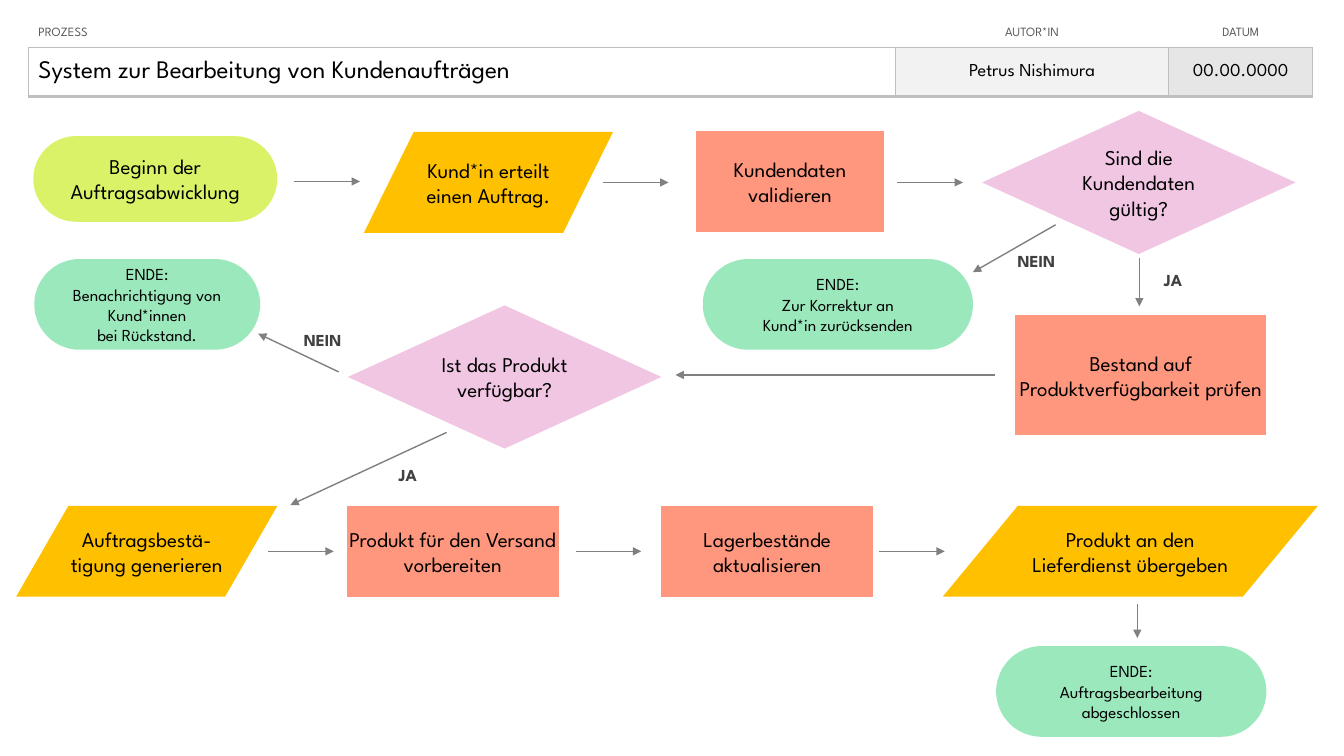
from dataclasses import dataclass
from lxml.etree import SubElement
from pptx import Presentation
from pptx.dml.color import RGBColor as Rgb
from pptx.enum.shapes import MSO_CONNECTOR as Link, MSO_SHAPE as Form
from pptx.enum.text import MSO_ANCHOR as Anchor, PP_ALIGN as Align
from pptx.oxml.ns import qn
from pptx.util import Inches, Pt


@dataclass(frozen=True)
class Theme:
    font: str = "League Spartan"
    ink: str = "000000"
    head: str = "595959"
    label: str = "404040"
    arrow: str = "808080"
    edge: str = "BFBFBF"
    white: str = "FFFFFF"
    light: str = "F2F2F2"
    grey: str = "E6E6E6"
    start: str = "DAF267"
    end: str = "9CE8BD"
    data: str = "FFC000"
    step: str = "FF967E"
    choice: str = "F1C6E3"
    tiny: float = 9
    small: float = 12
    mid: float = 13
    body: float = 15
    title: float = 18


theme = Theme()


def write(frame, text, size=theme.body, color=theme.ink, bold=False, align=Align.CENTER):
    frame.word_wrap = True
    for i, line in enumerate(text.split("\n")):
        para = frame.paragraphs[0] if i == 0 else frame.add_paragraph()
        para.alignment = align
        run = para.add_run()
        run.text = line
        run.font.name = theme.font
        run.font.size = Pt(size)
        run.font.bold = bold
        run.font.color.rgb = Rgb.from_string(color)


def pad(box, left, top, right, bottom):
    box.margin_left, box.margin_right = Inches(left), Inches(right)
    box.margin_top, box.margin_bottom = Inches(top), Inches(bottom)
    box.vertical_anchor = Anchor.MIDDLE


deck = Presentation()
deck.slide_width, deck.slide_height = Inches(13.33), Inches(7.5)
slide = deck.slides.add_slide(deck.slide_layouts[6])
shapes = slide.shapes

table = shapes.add_table(2, 3, Inches(0.28), Inches(0.19), Inches(12.74), Inches(0.77)).table
table.first_row = table.horz_banding = False
for col, width in zip(table.columns, (8.6, 2.71, 1.43)):
    col.width = Inches(width)
for row, height in zip(table.rows, (0.28, 0.49)):
    row.height = Inches(height)

heads = ("PROZESS", "AUTOR*IN", "DATUM")
facts = ("System zur Bearbeitung von Kundenaufträgen", "Petrus Nishimura", "00.00.0000")
fills = (theme.white, theme.light, theme.grey)
sizes = (theme.title, theme.mid, theme.mid)
for c in range(3):
    align = Align.CENTER if c else Align.LEFT
    for r, text in enumerate((heads[c], facts[c])):
        cell = table.cell(r, c)
        pad(cell, 0.01 if c else 0.1, 0.01, 0.01, 0)
        size, color = (sizes[c], theme.ink) if r else (theme.tiny, theme.head)
        write(cell.text_frame, text, size=size, color=color, align=align)
        props = cell._tc.get_or_add_tcPr()
        sides = {"L": 1, "R": 1, "T": 1, "B": 2.25} if r else {"L": 0, "R": 0, "T": 0, "B": 1}
        for side, width in sides.items():
            edge = SubElement(props, qn("a:ln" + side), w=str(Pt(width)))
            if width:
                paint = SubElement(edge, qn("a:solidFill"))
                SubElement(paint, qn("a:srgbClr"), val=theme.edge)
            else:
                SubElement(edge, qn("a:noFill"))
        if r:
            cell.fill.solid()
            cell.fill.fore_color.rgb = Rgb.from_string(fills[c])
        else:
            cell.fill.background()

kinds = {
    "start": (Form.ROUNDED_RECTANGLE, theme.start, theme.body, 0.02),
    "end": (Form.ROUNDED_RECTANGLE, theme.end, theme.small, 0.02),
    "data": (Form.FLOWCHART_DATA, theme.data, theme.body, 0),
    "step": (Form.FLOWCHART_PROCESS, theme.step, theme.body, 0.02),
    "choice": (Form.FLOWCHART_DECISION, theme.choice, theme.body, 0),
}
nodes = (
    ("start", 0.33, 1.35, 2.42, 0.85, "Beginn der Auftragsabwicklung"),
    ("data", 3.61, 1.31, 2.47, 1, "Kund*in erteilt einen Auftrag."),
    ("step", 6.9, 1.3, 1.87, 1, "Kundendaten validieren"),
    ("choice", 9.74, 1.1, 3.11, 1.42, "Sind die Kundendaten gültig?"),
    ("end", 6.97, 2.57, 2.68, 0.9, "ENDE:\nZur Korrektur an\nKund*in zurücksenden"),
    ("step", 10.07, 3.13, 2.49, 1.19, "Bestand auf Produktverfügbarkeit prüfen"),
    ("choice", 3.45, 3.03, 3.11, 1.42, "Ist das Produkt verfügbar?"),
    ("end", 0.34, 2.57, 2.24, 0.9, "ENDE:\nBenachrichtigung von Kund*innen\nbei Rückstand."),
    ("data", 0.16, 5.02, 2.59, 0.9, "Auftragsbestä-tigung generieren"),
    ("step", 3.44, 5.02, 2.1, 0.9, "Produkt für den Versand vorbereiten"),
    ("step", 6.56, 5.02, 2.1, 0.9, "Lagerbestände\naktualisieren"),
    ("data", 9.35, 5.02, 3.72, 0.9, "Produkt an den\nLieferdienst übergeben"),
    ("end", 9.88, 6.41, 2.68, 0.9, "ENDE:\nAuftragsbearbeitung abgeschlossen"),
)
for kind, x, y, w, h, text in nodes:
    form, fill, size, gap = kinds[kind]
    node = shapes.add_shape(form, Inches(x), Inches(y), Inches(w), Inches(h))
    node.shadow.inherit = False
    node.fill.solid()
    node.fill.fore_color.rgb = Rgb.from_string(fill)
    node.line.fill.background()
    if form == Form.ROUNDED_RECTANGLE:
        node.adjustments[0] = 0.5
    pad(node.text_frame, gap, gap, gap, gap)
    write(node.text_frame, text, size=size)

labels = (
    ("NEIN", 9.87, 2.37, 0.82),
    ("JA", 11.35, 2.56, 0.57),
    ("NEIN", 2.79, 3.16, 0.82),
    ("JA", 3.76, 4.5, 0.57),
)
for text, x, y, w in labels:
    frame = shapes.add_textbox(Inches(x), Inches(y), Inches(w), Inches(0.43)).text_frame
    pad(frame, 0.02, 0.02, 0.02, 0.02)
    write(frame, text, size=theme.small, color=theme.label, bold=True)

short = ((2.92, 1.8), (5.98, 1.81), (8.9, 1.81), (2.66, 5.47), (5.71, 5.47), (8.72, 5.47))
arrows = [(x, y, x + 0.65, y) for x, y in short] + [
    (11.3, 2.56, 11.3, 3.04),
    (10.47, 2.23, 9.65, 2.7),
    (9.87, 3.72, 6.7, 3.72),
    (3.36, 3.69, 2.56, 3.31),
    (4.43, 4.29, 2.88, 5.01),
    (11.28, 5.99, 11.28, 6.33),
]
for ends in arrows:
    arrow = shapes.add_connector(Link.STRAIGHT, *map(Inches, ends))
    arrow.line.color.rgb = Rgb.from_string(theme.arrow)
    arrow.line.width = Pt(1)
    SubElement(arrow.line._get_or_add_ln(), qn("a:tailEnd"), type="triangle")
    SubElement(arrow._element.spPr, qn("a:effectLst"))

deck.save("out.pptx")
